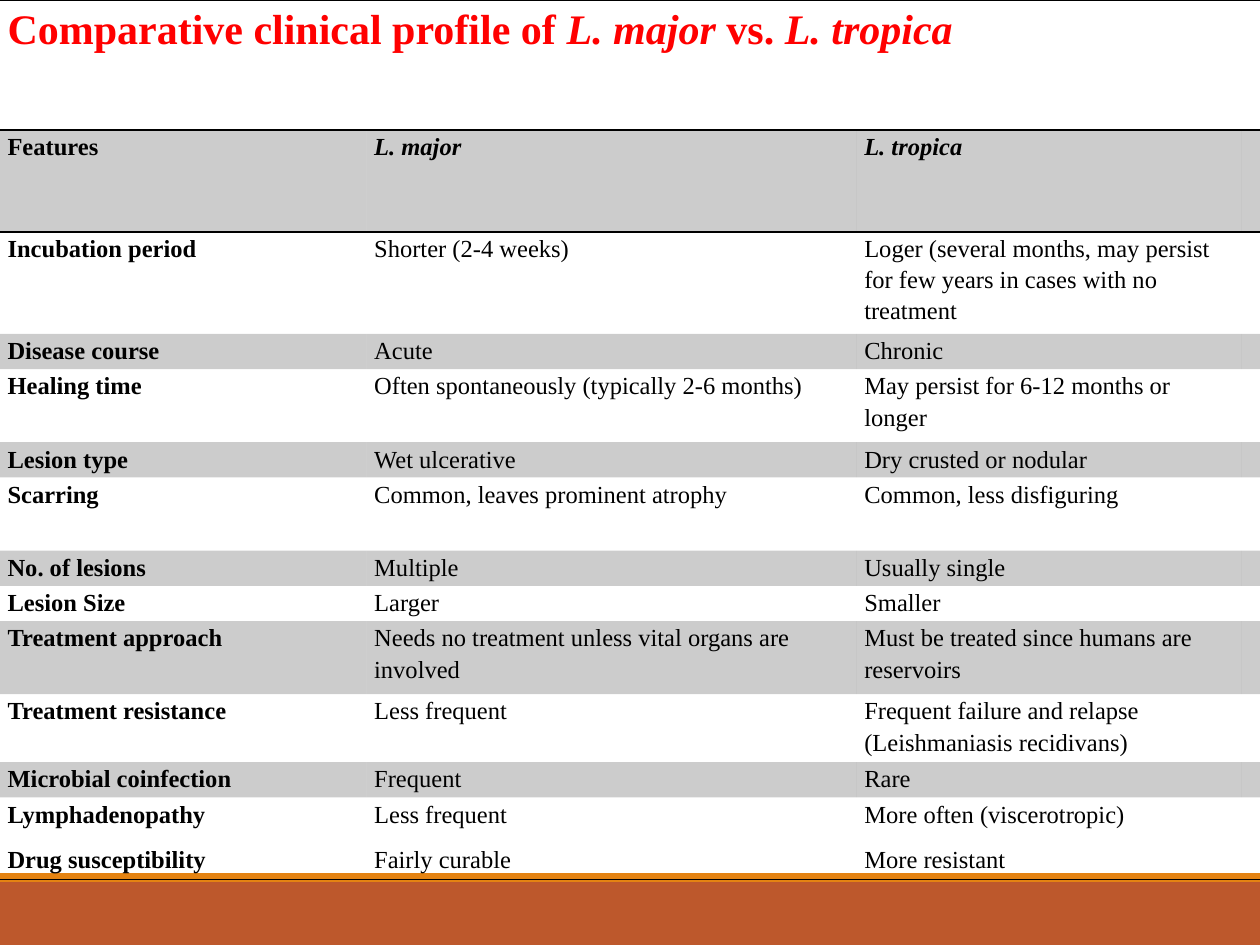
from dataclasses import dataclass

from lxml.etree import SubElement
from pptx import Presentation
from pptx.dml.color import RGBColor
from pptx.enum.shapes import MSO_SHAPE as Shape
from pptx.oxml.ns import qn
from pptx.util import Inches, Pt

BLACK = RGBColor(0x00, 0x00, 0x00)
RED = RGBColor(0xFF, 0x00, 0x00)
ORANGE = RGBColor(0xE4, 0x83, 0x12)
RUST = RGBColor(0xBD, 0x58, 0x2C)
FONT = "Times New Roman"
NO_STYLE_NO_GRID = "{2D5ABB26-0587-4C30-8999-92F81FD0307C}"
COLUMN_WIDTHS = (2.91, 3.89, 3.05, 0.15)
TITLE_HEIGHT = 1.03


@dataclass(frozen=True)
class Bar:
    top: float
    height: float
    color: RGBColor


@dataclass(frozen=True)
class Feature:
    height: float
    name: str
    major: str
    tropica: str


@dataclass(frozen=True)
class TextStyle:
    size: int = 14
    color: RGBColor = BLACK
    bold: bool = False
    italic: bool = False


FOOTER_BARS = (Bar(7, 0.5, RUST), Bar(6.93, 0.07, ORANGE))
TITLE_PARTS = (
    ("Comparative clinical profile of ", False),
    ("L. major ", True),
    ("vs. ", False),
    ("L. tropica", True),
)
FEATURES = (
    Feature(0.81, "Features", "L. major", "L. tropica"),
    Feature(0.81, "Incubation period", "Shorter (2-4 weeks)",
            "Loger (several months, may persist for few years in cases with no treatment"),
    Feature(0.28, "Disease course", "Acute", "Chronic"),
    Feature(0.58, "Healing time", "Often spontaneously (typically 2-6 months)",
            "May persist for 6-12 months or longer"),
    Feature(0.28, "Lesion type", "Wet ulcerative", "Dry crusted or nodular"),
    Feature(0.58, "Scarring", "Common, leaves prominent atrophy", "Common, less disfiguring"),
    Feature(0.28, "No. of lesions", "Multiple", "Usually single"),
    Feature(0.28, "Lesion Size", "Larger", "Smaller"),
    Feature(0.58, "Treatment approach", "Needs no treatment unless vital organs are involved",
            "Must be treated since humans are reservoirs"),
    Feature(0.54, "Treatment resistance", "Less frequent",
            "Frequent failure and relapse (Leishmaniasis recidivans)"),
    Feature(0.28, "Microbial coinfection", "Frequent", "Rare"),
    Feature(0.65, "Lymphadenopathy\nDrug susceptibility", "Less frequent\nFairly curable",
            "More often (viscerotropic)\nMore resistant"),
)


def add_bar(slide, bar: Bar) -> None:
    shape = slide.shapes.add_shape(
        Shape.RECTANGLE, 0, Inches(bar.top), Inches(10), Inches(bar.height))
    shape.shadow.inherit = False
    shape.fill.solid()
    shape.fill.fore_color.rgb = bar.color
    shape.line.fill.background()


def add_border(cell, tag: str) -> None:
    """Add a thin black line to one side; call it before any fill is set."""
    line = SubElement(cell._tc.get_or_add_tcPr(), qn(tag), w=str(Pt(1)))
    fill = SubElement(line, qn("a:solidFill"))
    SubElement(fill, qn("a:srgbClr"), val=str(BLACK))


def shade(cell) -> None:
    """Fill with black at 20 % opacity."""
    cell.fill.solid()
    cell.fill.fore_color.rgb = BLACK
    cell_fill = cell._tc.tcPr.find(qn("a:solidFill"))
    SubElement(cell_fill.find(qn("a:srgbClr")), qn("a:alpha"), val="20000")


def set_margins(cell) -> None:
    cell.margin_left = cell.margin_right = Inches(0.06)
    cell.margin_top = cell.margin_bottom = 0


def format_paragraph(paragraph) -> None:
    paragraph.line_spacing = 1.15
    paragraph.space_after = Pt(8)


def format_run(run, style: TextStyle) -> None:
    run.font.name = FONT
    run.font.size = Pt(style.size)
    run.font.color.rgb = style.color
    run.font.bold = style.bold
    run.font.italic = style.italic


def fill_title(cell) -> None:
    set_margins(cell)
    paragraph = cell.text_frame.paragraphs[0]
    format_paragraph(paragraph)
    for text, italic in TITLE_PARTS:
        run = paragraph.add_run()
        run.text = text
        format_run(run, TextStyle(24, RED, True, italic))


def fill_cell(cell, text: str, style: TextStyle) -> None:
    set_margins(cell)
    cell.text_frame.text = text
    for paragraph in cell.text_frame.paragraphs:
        format_paragraph(paragraph)
        for run in paragraph.runs:
            format_run(run, style)
        if not text:  # keeps an empty cell from stretching its row
            SubElement(paragraph._p, qn("a:endParaRPr"), sz="1000")


def add_comparison_table(slide) -> None:
    heights = (TITLE_HEIGHT, *(feature.height for feature in FEATURES))
    table = slide.shapes.add_table(
        len(heights), len(COLUMN_WIDTHS), 0, 0,
        Inches(sum(COLUMN_WIDTHS)), Inches(sum(heights))).table
    table.first_row = table.horz_banding = False
    table._tbl.tblPr.find(qn("a:tableStyleId")).text = NO_STYLE_NO_GRID
    for column, width in zip(table.columns, COLUMN_WIDTHS):
        column.width = Inches(width)
    for row, height in zip(table.rows, heights):
        row.height = Inches(height)

    for cell in table.rows[0].cells:
        add_border(cell, "a:lnT")
        add_border(cell, "a:lnB")
    title = table.cell(0, 0)
    title.merge(table.cell(0, len(COLUMN_WIDTHS) - 1))
    fill_title(title)

    for index, feature in enumerate(FEATURES):
        is_header = index == 0
        texts = (feature.name, feature.major, feature.tropica, "")
        for column, text in enumerate(texts):
            cell = table.cell(index + 1, column)
            style = TextStyle(bold=is_header or column == 0,
                              italic=is_header and column > 0)
            fill_cell(cell, text, style)
            if is_header:
                add_border(cell, "a:lnT")
            if index == len(FEATURES) - 1:
                add_border(cell, "a:lnB")
            if index % 2 == 0:
                shade(cell)


def main() -> None:
    presentation = Presentation()
    presentation.slide_width = Inches(10)
    presentation.slide_height = Inches(7.5)
    slide = presentation.slides.add_slide(presentation.slide_layouts[6])
    for bar in FOOTER_BARS:
        add_bar(slide, bar)
    add_comparison_table(slide)
    presentation.save("out.pptx")


if __name__ == "__main__":
    main()
